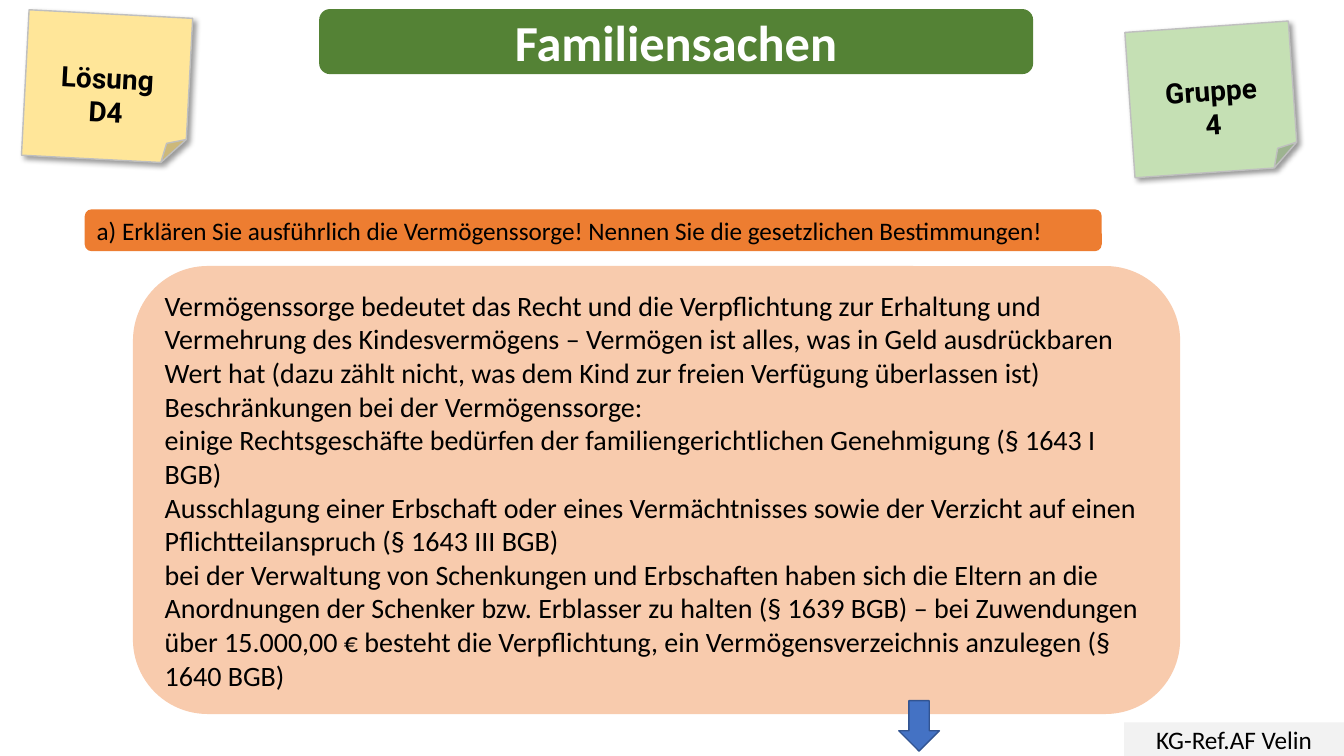
from lxml import etree
from pptx import Presentation
from pptx.dml.color import RGBColor
from pptx.enum import shapes, text
from pptx.oxml import ns
from pptx.util import Pt

BLACK = RGBColor(0x00, 0x00, 0x00)
WHITE = RGBColor(0xFF, 0xFF, 0xFF)
GREEN = RGBColor(0x54, 0x82, 0x35)
LIGHT_GREEN = RGBColor(0xC5, 0xE0, 0xB4)
YELLOW = RGBColor(0xFF, 0xE6, 0x99)
ORANGE = RGBColor(0xED, 0x7D, 0x31)
PEACH = RGBColor(0xF8, 0xCB, 0xAD)
PALE_GRAY = RGBColor(0xF2, 0xF2, 0xF2)
GRAY = RGBColor(0xBF, 0xBF, 0xBF)
BLUE = RGBColor(0x44, 0x72, 0xC4)
DARK_BLUE = RGBColor(0x32, 0x54, 0x91)

ANSWER = [
    "Vermögenssorge bedeutet das Recht und die Verpflichtung zur Erhaltung und "
    "Vermehrung des Kindesvermögens – Vermögen ist alles, was in Geld ausdrückbaren "
    "Wert hat (dazu zählt nicht, was dem Kind zur freien Verfügung überlassen ist)",
    "Beschränkungen bei der Vermögenssorge:",
    "einige Rechtsgeschäfte bedürfen der familiengerichtlichen Genehmigung (§ 1643 I BGB)",
    "Ausschlagung einer Erbschaft oder eines Vermächtnisses sowie der Verzicht auf einen "
    "Pflichtteilanspruch (§ 1643 III BGB)",
    "bei der Verwaltung von Schenkungen und Erbschaften haben sich die Eltern an die "
    "Anordnungen der Schenker bzw. Erblasser zu halten (§ 1639 BGB) – bei Zuwendungen "
    "über 15.000,00 € besteht die Verpflichtung, ein Vermögensverzeichnis anzulegen "
    "(§ 1640 BGB)",
]


class SlideBuilder:
    """Draws panels, sticky notes and arrows in one style on a slide."""

    font_name = "Calibri"
    note_font_name = "Roboto"
    rounded = shapes.MSO_SHAPE.ROUNDED_RECTANGLE

    def __init__(self, slide):
        self.slide = slide

    def shape(self, kind, box, fill, line=None):
        shape = self.slide.shapes.add_shape(kind, *map(Pt, box))
        shape.shadow.inherit = False
        shape.fill.solid()
        shape.fill.fore_color.rgb = fill
        if line is None:
            shape.line.fill.background()
        else:
            shape.line.color.rgb = line
            shape.line.width = Pt(1)
        return shape

    def label(self, shape, lines, size, color=BLACK, bold=False,
              align=text.PP_ALIGN.LEFT, font_name=font_name):
        frame = shape.text_frame
        frame.word_wrap = True
        frame.vertical_anchor = text.MSO_ANCHOR.MIDDLE
        frame.text = "\n".join(lines)
        for paragraph in frame.paragraphs:
            paragraph.alignment = align
            paragraph.font.name = font_name
            paragraph.font.size = Pt(size)
            paragraph.font.bold = bold
            paragraph.font.color.rgb = color

    def panel(self, box, fill, lines, size, kind=rounded, **style):
        self.label(self.shape(kind, box, fill), lines, size, **style)

    def note(self, left, top, rotation, fill, lines):
        shape = self.shape(shapes.MSO_SHAPE.FOLDED_CORNER,
                           (left, top, 117, 104), fill, GRAY)
        shape.rotation = rotation
        self.label(shape, lines, 20, bold=True, align=text.PP_ALIGN.CENTER,
                   font_name=self.note_font_name)
        shape.text_frame.margin_top = Pt(32)
        self.cast_shadow(shape)

    def cast_shadow(self, shape):
        effects = shape._element.spPr.find(ns.qn("a:effectLst"))
        shadow = etree.SubElement(
            effects, ns.qn("a:outerShdw"), blurRad=str(Pt(4)), dist=str(Pt(3)),
            dir=str(45 * 60000), algn="tl", rotWithShape="0")
        color = etree.SubElement(shadow, ns.qn("a:srgbClr"), val=str(BLACK))
        etree.SubElement(color, ns.qn("a:alpha"), val="40000")

    def arrow(self, box):
        self.shape(shapes.MSO_SHAPE.DOWN_ARROW, box, BLUE, DARK_BLUE)


def main():
    presentation = Presentation()
    presentation.slide_width = Pt(960)
    presentation.slide_height = Pt(540)
    builder = SlideBuilder(
        presentation.slides.add_slide(presentation.slide_layouts[6]))
    center = text.PP_ALIGN.CENTER

    builder.panel((228, 6.5, 510, 46.5), GREEN, ["Familiensachen"], 36,
                  color=WHITE, bold=True, align=center)
    builder.panel((803, 516, 157, 24), PALE_GRAY, ["KG-Ref.AF Velin"], 18,
                  kind=shapes.MSO_SHAPE.RECTANGLE, align=center)
    builder.note(18, 10, 3, YELLOW, ["Lösung", "D4"])
    builder.panel((60.5, 149.5, 726.5, 30), ORANGE,
                  ["a) Erklären Sie ausführlich die Vermögenssorge! "
                   "Nennen Sie die gesetzlichen Bestimmungen!"], 18)
    builder.panel((95, 190, 748, 320), PEACH, ANSWER, 20)
    builder.note(807, 19, 356, LIGHT_GREEN, ["Gruppe", "4"])
    builder.arrow((642, 500.5, 29, 36))

    presentation.save("out.pptx")


if __name__ == "__main__":
    main()
